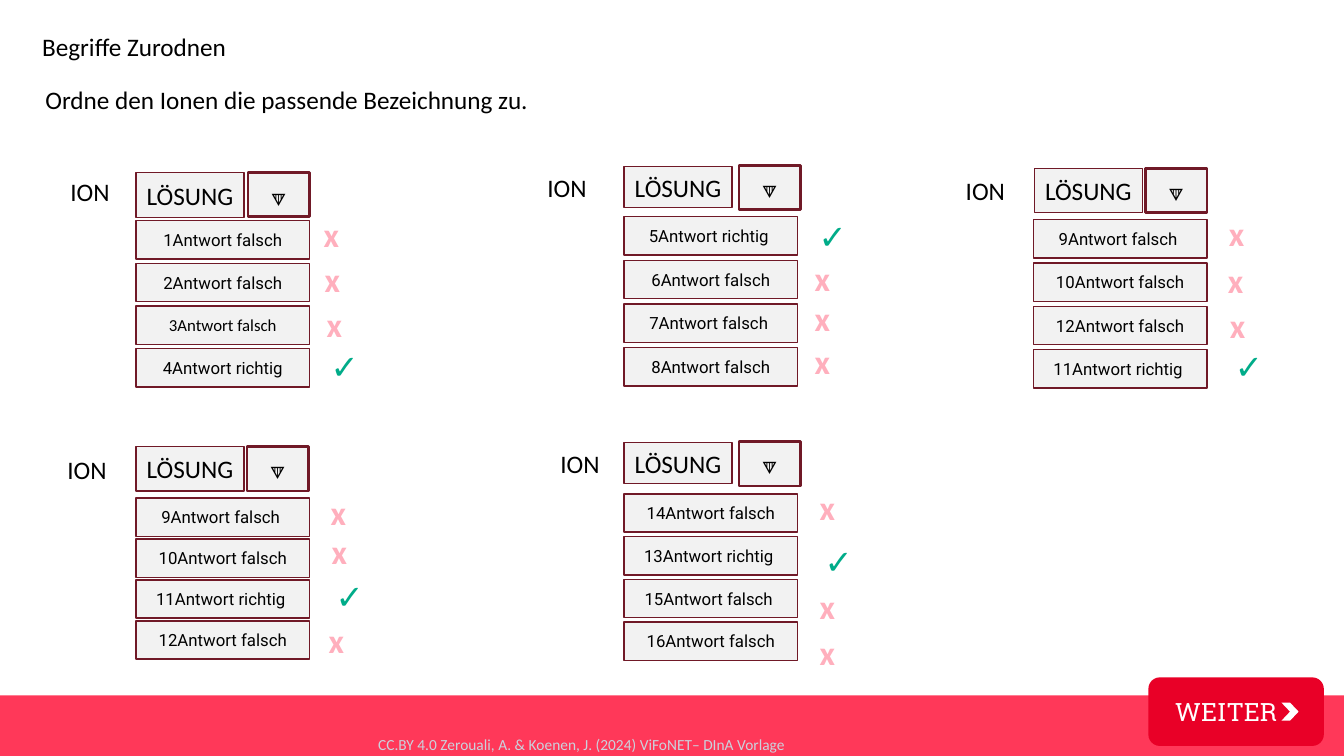
import dataclasses
import typing

import pptx
import pptx.dml.color
import pptx.enum.shapes
import pptx.enum.text
import pptx.oxml.ns
import pptx.util

Inches = pptx.util.Inches
Anchor = pptx.enum.text.MSO_ANCHOR
Align = pptx.enum.text.PP_ALIGN
AutoSize = pptx.enum.text.MSO_AUTO_SIZE
Preset = pptx.enum.shapes.MSO_SHAPE


@dataclasses.dataclass(frozen=True)
class Theme:
    black: str = "000000"
    white: str = "FFFFFF"
    box: str = "F2F2F2"
    border: str = "701927"
    band: str = "FF3859"
    button: str = "E90027"
    credit: str = "CBD2DD"
    right: str = "00AC89"
    wrong: str = "FFAFBD"
    body_font: str = "Calibri"
    answer_font: str = "Roboto"
    button_font: str = "Roboto Slab"
    credit_size: float = 11
    answer_size: float = 12
    body_size: float = 18
    arrow_size: float = 20
    mark_size: float = 24


THEME = Theme()


class Box(typing.NamedTuple):
    left: float
    top: float
    width: float
    height: float


class Style(typing.NamedTuple):
    font: str = THEME.body_font
    size: float = THEME.body_size
    color: str = THEME.black
    bold: bool = False
    align: typing.Any = Align.LEFT
    line_spacing: typing.Optional[float] = None


class Mark(typing.NamedTuple):
    left: float
    top: float
    width: float = 0.39


@dataclasses.dataclass(frozen=True)
class Exercise:
    ion: Box
    solution: Box
    arrow: Box
    answer_left: float
    first_top: float
    last_top: float
    answers: list[str]
    marks: list[Mark]
    arrow_anchor: typing.Any = Anchor.TOP
    answer_fonts: dict[int, str] = dataclasses.field(default_factory=dict)


EXERCISES = [
    Exercise(Box(0.6, 1.7, 0.61, 0.4), Box(1.35, 1.71, 1.07, 0.45), Box(2.46, 1.71, 0.61, 0.44),
             1.35, 2.19, 3.46,
             ["1Antwort falsch", "2Antwort falsch", "3Antwort falsch", "4Antwort richtig"],
             [Mark(3.09, 2.07), Mark(3.1, 2.52), Mark(3.12, 2.97), Mark(3.18, 3.38, 0.32)],
             Anchor.BOTTOM, {2: THEME.body_font}),
    Exercise(Box(5.33, 1.66, 0.61, 0.4), Box(6.19, 1.65, 1.07, 0.41), Box(7.33, 1.64, 0.61, 0.44),
             6.19, 2.15, 3.45,
             ["5Antwort richtig ", "6Antwort falsch", "7Antwort falsch ", "8Antwort falsch"],
             [Mark(8.02, 2.09, 0.25), Mark(7.96, 2.51), Mark(7.96, 2.91), Mark(7.96, 3.33)]),
    Exercise(Box(9.48, 1.69, 0.61, 0.4), Box(10.26, 1.67, 1.07, 0.44), Box(11.36, 1.67, 0.61, 0.44),
             10.25, 2.18, 3.47,
             ["9Antwort falsch ", "10Antwort falsch", "12Antwort falsch", "11Antwort richtig "],
             [Mark(12.07, 2.06), Mark(12.06, 2.53), Mark(12.08, 2.98), Mark(12.15, 3.38, 0.25)]),
    Exercise(Box(0.57, 4.46, 0.61, 0.4), Box(1.35, 4.43, 1.07, 0.44), Box(2.45, 4.43, 0.61, 0.44),
             1.35, 4.94, 6.16,
             ["9Antwort falsch ", "10Antwort falsch", "11Antwort richtig ", "12Antwort falsch"],
             [Mark(3.16, 4.83), Mark(3.17, 5.22), Mark(3.23, 5.66, 0.25), Mark(3.14, 6.1)]),
    Exercise(Box(5.46, 4.4, 0.69, 0.4), Box(6.19, 4.39, 1.07, 0.41), Box(7.33, 4.38, 0.61, 0.44),
             6.19, 4.9, 6.17,
             ["14Antwort falsch", "13Antwort richtig ", "15Antwort falsch ", "16Antwort falsch"],
             [Mark(8.01, 4.78), Mark(8.08, 5.32, 0.25), Mark(8.01, 5.76), Mark(8.01, 6.22)]),
]


def rgb(color: str) -> pptx.dml.color.RGBColor:
    return pptx.dml.color.RGBColor.from_string(color)


def write(shape, text: str, style: Style) -> None:
    paragraph = shape.text_frame.paragraphs[0]
    paragraph.alignment = style.align
    if style.line_spacing:
        paragraph.line_spacing = style.line_spacing
    run = paragraph.add_run()
    run.text = text
    run.font.name = style.font
    run.font.size = pptx.util.Pt(style.size)
    run.font.bold = style.bold
    run.font.color.rgb = rgb(style.color)


def add_label(slide, box: Box, text: str, style: Style, tight: bool = False) -> None:
    """Text without fill; a tight label has no margins and does not wrap."""
    shape = slide.shapes.add_textbox(*map(Inches, box))
    frame = shape.text_frame
    frame.word_wrap = not tight
    frame.auto_size = AutoSize.SHAPE_TO_FIT_TEXT
    if tight:
        frame.margin_left = frame.margin_right = frame.margin_top = frame.margin_bottom = 0
    write(shape, text, style)


def add_panel(slide, box: Box, fill: str, preset=Preset.RECTANGLE, line_width: float = 0):
    shape = slide.shapes.add_shape(preset, *map(Inches, box))
    shape.shadow.inherit = False
    shape.fill.solid()
    shape.fill.fore_color.rgb = rgb(fill)
    if line_width:
        shape.line.color.rgb = rgb(THEME.border)
        shape.line.width = pptx.util.Pt(line_width)
    else:
        shape.line.fill.background()
    return shape


def add_exercise(slide, exercise: Exercise) -> None:
    centred = Style(align=Align.CENTER)
    add_label(slide, exercise.ion, "ION", Style())

    # Selection field with its drop-down arrow
    solution = add_panel(slide, exercise.solution, THEME.box, line_width=1)
    write(solution, "LÖSUNG", centred)
    arrow = add_panel(slide, exercise.arrow, THEME.box, line_width=1.75)
    arrow.text_frame.vertical_anchor = exercise.arrow_anchor
    arrow.text_frame.auto_size = AutoSize.SHAPE_TO_FIT_TEXT
    write(arrow, "🔽", centred._replace(font=THEME.answer_font, size=THEME.arrow_size))

    # Evenly spaced answers, each with its mark
    step = (exercise.last_top - exercise.first_top) / (len(exercise.answers) - 1)
    for index, (answer, mark) in enumerate(zip(exercise.answers, exercise.marks)):
        top = exercise.first_top + index * step
        field = add_panel(slide, Box(exercise.answer_left, top, 1.72, 0.38), THEME.box, line_width=1)
        font = exercise.answer_fonts.get(index, THEME.answer_font)
        write(field, answer, centred._replace(font=font, size=THEME.answer_size))
        symbol, color = ("✓", THEME.right) if "richtig" in answer else ("x", THEME.wrong)
        add_label(slide, Box(mark.left, mark.top, mark.width, 0.5), symbol,
                  centred._replace(size=THEME.mark_size, color=color, bold=True))


def main() -> None:
    presentation = pptx.Presentation()
    presentation.slide_width = Inches(13.33)
    presentation.slide_height = Inches(7.5)
    slide = presentation.slides.add_slide(presentation.slide_layouts[6])

    # Footer band and credit
    add_panel(slide, Box(0, 6.9, 13.33, 0.6), THEME.band)
    add_label(slide, Box(3.75, 7.27, 4.09, 0.2),
              "CC.BY 4.0 Zerouali, A. & Koenen, J. (2024) ViFoNET– DInA Vorlage",
              Style(size=THEME.credit_size, color=THEME.credit, line_spacing=1.13), tight=True)

    # Title and task
    add_label(slide, Box(0.32, 0.26, 11.84, 0.4), "Begriffe Zurodnen", Style())
    add_label(slide, Box(0.45, 0.8, 4.92, 0.32), "Ordne den Ionen die passende Bezeichnung zu.",
              Style(line_spacing=1.13), tight=True)

    for exercise in EXERCISES:
        add_exercise(slide, exercise)

    # Button to the next slide
    button = add_panel(slide, Box(11.39, 6.72, 1.74, 0.68), THEME.button, Preset.ROUNDED_RECTANGLE)
    button.text_frame.margin_left = Inches(0.23)
    write(button, "WEITER", Style(font=THEME.button_font, color=THEME.white))
    add_panel(slide, Box(12.71, 6.97, 0.17, 0.18), THEME.white, Preset.CHEVRON)

    presentation.save("out.pptx")


if __name__ == "__main__":
    main()
